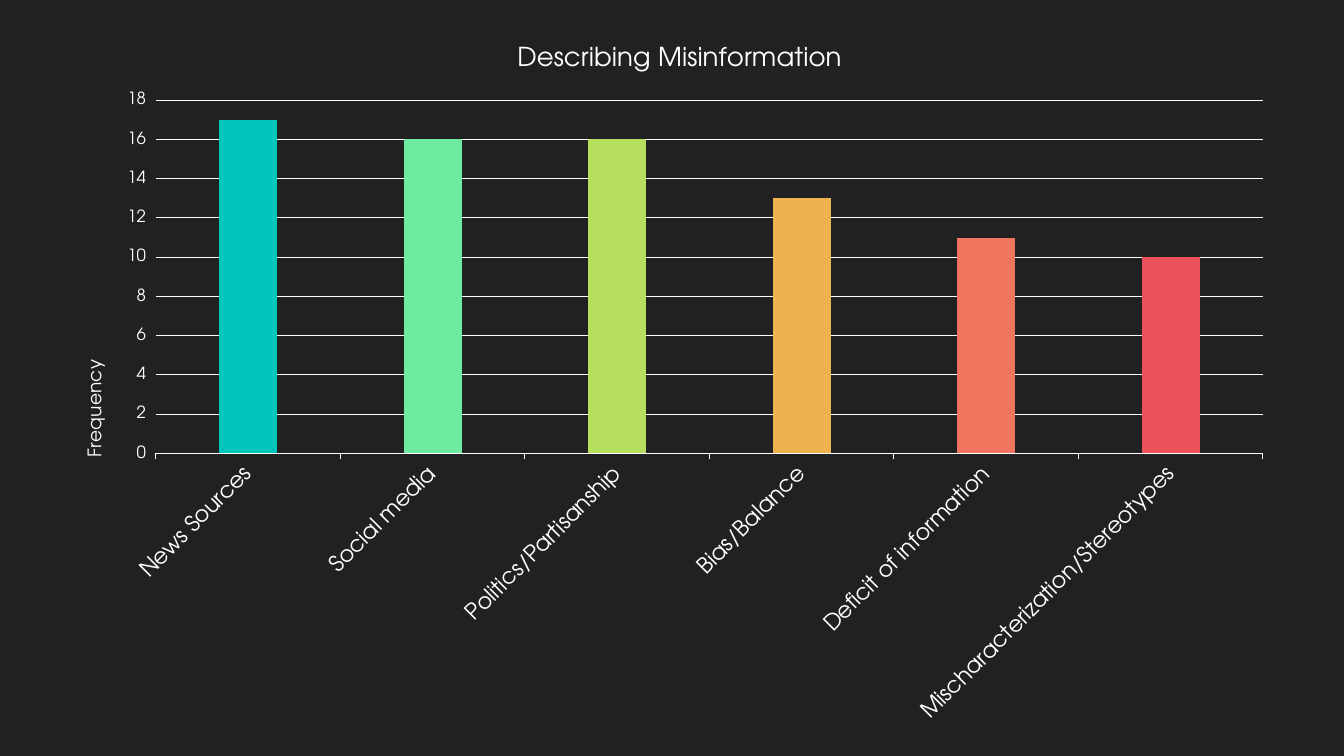
from pptx import Presentation
from pptx import util as u
from pptx.chart.data import CategoryChartData
from pptx.dml.color import RGBColor
from pptx.enum import chart as ch
from pptx.oxml import parse_xml
from pptx.oxml.ns import nsdecls

FONT = "TeX Gyre Adventor"
COLORS = {"background": "212121", "ink": "FFFFFF"}
# theme: (frequency, bar colour)
THEMES = {
    "News Sources": (17, "00C6BB"),
    "Social media": (16, "6FEBA0"),
    "Politics/Partisanship": (16, "B6DF5E"),
    "Bias/Balance": (13, "EFB251"),
    "Deficit of information": (11, "EF755F"),
    "Mischaracterization/Stereotypes": (10, "ED515C"),
}
HEADING = "Describing Misinformation"


def style_font(font, size):
    for name, value in {"name": FONT, "size": u.Pt(size), "bold": False}.items():
        setattr(font, name, value)
    font.color.rgb = RGBColor.from_string(COLORS["ink"])


def manual_layout(target="", **shares):
    """Build a chart layout from shares of the chart's size."""
    inner = f'<c:layoutTarget val="{target}"/>' if target else ""
    modes = "".join(f'<c:{side}Mode val="edge"/>' for side in "xy")
    places = "".join(f'<c:{key} val="{share}"/>' for key, share in shares.items())
    return parse_xml(f'<c:layout {nsdecls("c")}><c:manualLayout>{inner}{modes}{places}'
                     "</c:manualLayout></c:layout>")


prs = Presentation()
prs.slide_width, prs.slide_height = u.Inches(13.33), u.Inches(7.5)
slide = prs.slides.add_slide(prs.slide_layouts[6])
slide.background.fill.solid()
slide.background.fill.fore_color.rgb = RGBColor.from_string(COLORS["background"])

frequencies = CategoryChartData()
frequencies.categories = list(THEMES)
frequencies.add_series(HEADING, [count for count, _ in THEMES.values()])
chart = slide.shapes.add_chart(
    ch.XL_CHART_TYPE.COLUMN_CLUSTERED,
    u.Inches(0.57), u.Inches(0.18), u.Inches(12.2), u.Inches(7.14), frequencies,
).chart
chart.has_legend = False
style_font(chart.font, 10)

# Bars
bars = chart.plots[0]
for name, value in {"gap_width": 219, "overlap": -27, "vary_by_categories": False}.items():
    setattr(bars, name, value)
for i, (_, color) in enumerate(THEMES.values()):
    fill = bars.series[0].points[i].format.fill
    fill.solid()
    fill.fore_color.rgb = RGBColor.from_string(color)

# Axes
themes, counts = chart.category_axis, chart.value_axis
for axis, size in ((themes, 16), (counts, 12)):
    style_font(axis.tick_labels.font, size)
    axis.major_tick_mark = ch.XL_TICK_MARK.OUTSIDE
    axis.minor_tick_mark = ch.XL_TICK_MARK.NONE
themes.tick_labels.font._element.getparent().getparent().getparent().find(
    "{*}bodyPr").set("rot", str(-45 * 60000))
for name, value in {"minimum_scale": 0, "maximum_scale": 18, "major_unit": 2}.items():
    setattr(counts, name, value)
counts.format.line.fill.background()
for line in (themes.format.line, counts.major_gridlines.format.line):
    line.color.rgb = RGBColor.from_string(COLORS["ink"])
    line.width = u.Pt(0.75)

# Titles and plot area
chart.has_title = True
for title, wording, size, x, y in (
    (chart.chart_title, HEADING, 18.6, 0.37, 0.03),
    (counts.axis_title, "Frequency", 13.3, 0.02, 0.47),
):
    title.text_frame.text = wording
    style_font(title.text_frame.paragraphs[0].runs[0].font, size)
    element = title._element
    for old in element.findall("{*}layout"):
        element.remove(old)
    element.find("{*}tx").addnext(manual_layout(x=x, y=y))
counts.axis_title.text_frame._txBody.find("{*}bodyPr").set("rot", str(-90 * 60000))

plot_area = chart._chartSpace.chart.plotArea
for old in plot_area.findall("{*}layout"):
    plot_area.remove(old)
plot_area.insert(0, manual_layout("inner", x=0.08, y=0.114, w=0.9, h=0.491))

prs.save("out.pptx")
